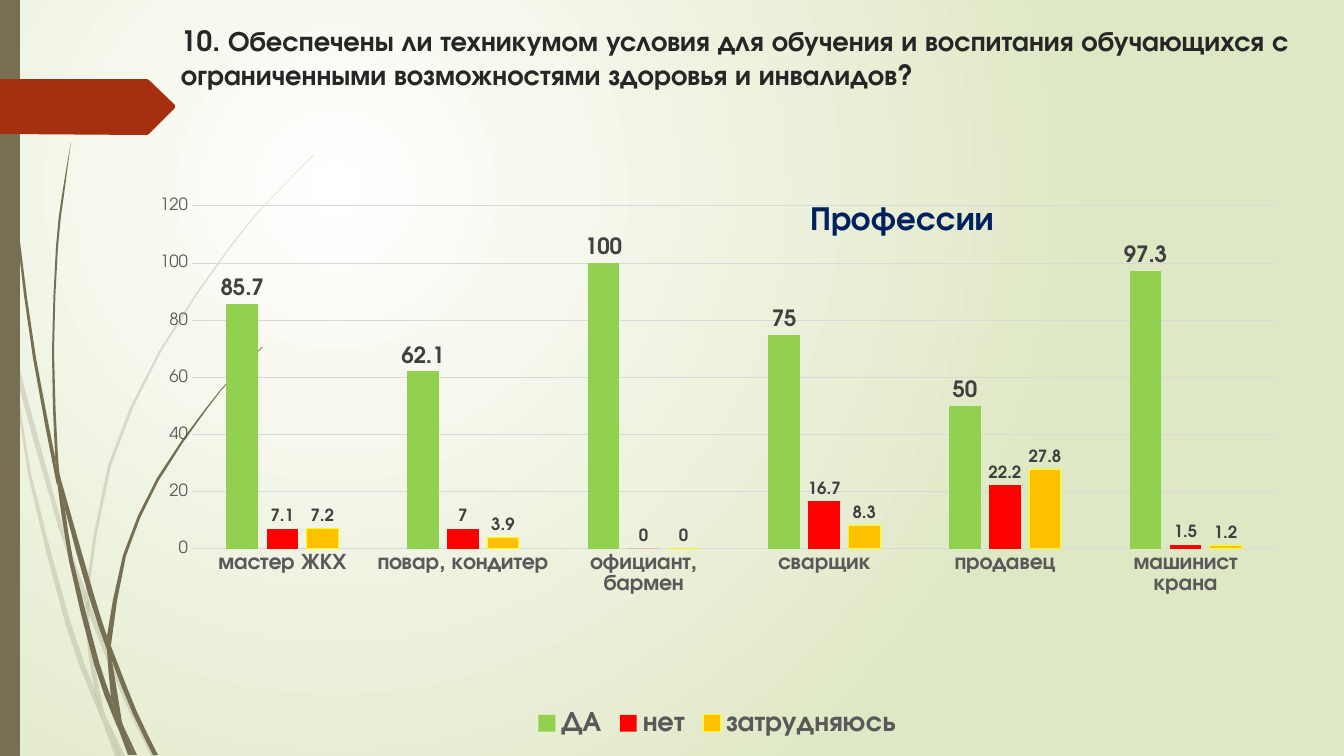
from dataclasses import dataclass

from lxml.etree import SubElement
from pptx import Presentation
from pptx.chart.data import CategoryChartData
from pptx.dml.color import RGBColor
from pptx.enum.chart import (XL_CHART_TYPE as ChartType, XL_LABEL_POSITION as LabelPos,
                             XL_LEGEND_POSITION as LegendPos, XL_TICK_MARK as TickMark)
from pptx.enum.shapes import MSO_SHAPE as Shape
from pptx.enum.text import MSO_ANCHOR as Anchor
from pptx.oxml.ns import qn
from pptx.util import Pt

PX = 914400 / 100.8
WIDTH, HEIGHT = 1344, 756


@dataclass(frozen=True)
class Theme:
    font: str = "TeX Gyre Adventor"
    olive: str = "766F54"
    rust: str = "A53010"
    glow: str = "FFFFFF"
    meadow: str = "DFE8C4"
    ink: str = "262626"
    navy: str = "002060"
    axis_text: str = "595959"
    label_text: str = "404040"
    rule: str = "D9D9D9"
    heading: int = 20
    chart_title: int = 24
    legend: int = 20
    category: int = 16
    scale: int = 12
    hairline: float = 0.75


THEME = Theme()

# Each blade piece is its left edge and its right edge, both from top to bottom.
PALE_BLADES = [
    ([(0, 301), (10, 347), (11, 353)], [(0, 284), (9, 325), (11, 353)]),
    ([(14, 348), (17, 379), (58, 526), (85, 604)], [(14, 348), (62, 524), (86, 591)]),
    ([(89, 601), (89, 615), (124, 700), (151, 756)], [(89, 601), (93, 612), (128, 698), (156, 756)]),
    ([(106, 717), (120, 756)], [(106, 717), (125, 756)]),
    ([(11, 353), (28, 474), (66, 626), (93, 699), (102, 720)],
     [(11, 353), (17, 379), (31, 473), (71, 624), (94, 688), (100, 713)]),
    ([(85, 604), (88, 651), (94, 688), (97, 698), (106, 717)],
     [(85, 604), (89, 615), (92, 651), (104, 712)]),
    ([(314, 154), (270, 199), (230, 246), (159, 351), (108, 465), (86, 589)],
     [(314, 155), (270, 200), (231, 247), (161, 352), (111, 466), (89, 589), (89, 601)]),
    ([(102, 720), (115, 756)], [(102, 720), (120, 756)]),
    ([(86, 591), (85, 604), (89, 613)], [(86, 591), (89, 601), (89, 615)]),
    ([(94, 688), (100, 713), (102, 720), (120, 756)], [(94, 688), (97, 698), (106, 717), (120, 756)]),
]
DARK_BLADES = [
    ([(3, 0), (4, 48), (7, 111), (17, 235), (33, 358), (56, 481)],
     [(4, 0), (5, 48), (8, 110), (19, 234), (36, 358), (55, 457), (57, 485)]),
    ([(60, 476), (65, 509), (89, 597), (107, 650)], [(60, 476), (94, 595), (107, 636)]),
    ([(111, 646), (112, 661), (133, 714), (153, 755)], [(111, 646), (114, 654), (137, 712), (158, 755)]),
    ([(57, 481), (69, 561), (94, 664), (112, 714), (118, 728)],
     [(57, 481), (65, 509), (73, 560), (99, 662), (111, 697), (117, 723)]),
    ([(71, 142), (62, 195), (56, 247), (52, 352), (55, 453), (60, 476)],
     [(71, 142), (64, 195), (58, 247), (54, 352), (58, 457), (60, 476)]),
    ([(123, 725), (134, 755)], [(123, 725), (137, 755)]),
    ([(55, 453), (55, 457), (57, 481)], [(55, 453), (60, 476), (65, 509)]),
    ([(262, 347), (233, 376), (206, 408), (157, 478), (123, 555), (107, 636)],
     [(263, 347), (233, 377), (207, 409), (159, 480), (126, 556), (112, 638), (111, 646)]),
    ([(118, 728), (128, 755)], [(118, 728), (132, 755)]),
    ([(107, 650), (111, 697), (117, 712), (123, 725)], [(107, 650), (110, 656), (112, 661), (122, 722)]),
    ([(107, 636), (107, 650), (112, 661)], [(107, 636), (111, 646), (112, 661)]),
    ([(111, 697), (117, 723), (118, 728), (131, 755)], [(111, 697), (117, 712), (123, 725), (134, 755)]),
]
TAG = [(0, 79), (147, 79), (149, 80), (175, 105), (175, 108), (149, 134), (147, 135), (0, 134)]

HEADING = ("10. Обеспечены ли техникумом условия для обучения и воспитания обучающихся "
           "с ограниченными возможностями здоровья и инвалидов?")
TRADES = ["мастер ЖКХ", "повар, кондитер", "официант, бармен", "сварщик", "продавец",
          "машинист крана"]
# name, values, fill, outline, label size
ANSWERS = [
    ("ДА", [85.7, 62.1, 100, 75, 50, 97.3], "92D050", None, 16),
    ("нет", [7.1, 7, 0, 16.7, 22.2, 1.5], "FF0000", None, 12),
    ("затрудняюсь", [7.2, 3.9, 0, 8.3, 27.8, 1.2], "FFC000", "FFFF00", 12),
]


def emu(*lengths):
    return [round(v * PX) for v in lengths]


def smooth_edge(points):
    """Adds the Catmull-Rom midpoint between each two neighbours."""
    ends = [points[0], *points, points[-1]]
    curve = [points[0]]
    for a, b, c, d in zip(ends, ends[1:], ends[2:], ends[3:]):
        curve += [tuple((9 * (q + r) - p - w) / 16 for p, q, r, w in zip(a, b, c, d)), c]
    return curve


def place(parent, index, **fractions):
    """Gives a chart part a manual layout in fractions of the chart."""
    for old in parent.findall(qn("c:layout")):
        parent.remove(old)
    layout = SubElement(parent, qn("c:layout"))
    parent.insert(index, layout)
    manual = SubElement(layout, qn("c:manualLayout"))
    if "w" in fractions:
        SubElement(manual, qn("c:layoutTarget"), val="inner")
    for mode in ("xMode", "yMode"):
        SubElement(manual, qn("c:" + mode), val="edge")
    for key, value in fractions.items():
        SubElement(manual, qn("c:" + key), val=str(value))


class SlideBuilder:
    def __init__(self, slide, theme):
        self.s, self.theme = slide, theme

    def style_font(self, font, size, color, bold=False):
        font.name, font.size, font.bold = self.theme.font, Pt(size), bold
        font.color.rgb = RGBColor.from_string(color)

    def style_line(self, line, color):
        line.color.rgb = RGBColor.from_string(color)
        line.width = Pt(self.theme.hairline)

    def paint(self, shape, color, alpha=None):
        shape.shadow.inherit = False
        shape.fill.solid()
        shape.fill.fore_color.rgb = RGBColor.from_string(color)
        shape.line.fill.background()
        if alpha:
            tint = shape.element.find(".//" + qn("a:srgbClr"))
            SubElement(tint, qn("a:alpha"), val=str(alpha * 1000))

    def radial_background(self, inner, outer):
        fill = self.s.background.fill
        fill.gradient()
        for stop, color, position in zip(fill.gradient_stops, (inner, outer), (0, 1)):
            stop.color.rgb = RGBColor.from_string(color)
            stop.position = position
        grad = self.s.element.find(".//" + qn("a:gradFill"))
        grad.remove(grad.find(qn("a:lin")))
        path = SubElement(grad, qn("a:path"), path="circle")
        SubElement(path, qn("a:fillToRect"), l="50000", t="50000", r="100000", b="100000")

    def outline(self, points, color, alpha=None):
        start, *rest = [emu(*p) for p in points]
        builder = self.s.shapes.build_freeform(*start, scale=1.0)
        builder.add_line_segments(rest, close=True)
        self.paint(builder.convert_to_shape(), color, alpha)

    def blade(self, left, right, color, alpha=None):
        self.outline(smooth_edge(left) + smooth_edge(right)[::-1], color, alpha)

    def bar(self, x, y, w, h, color):
        self.paint(self.s.shapes.add_shape(Shape.RECTANGLE, *emu(x, y, w, h)), color)

    def text(self, x, y, w, h, text, size, color):
        tf = self.s.shapes.add_textbox(*emu(x, y, w, h)).text_frame
        tf.word_wrap, tf.vertical_anchor = True, Anchor.TOP
        tf.text = text
        self.style_font(tf.paragraphs[0].runs[0].font, size, color, True)

    def column_chart(self, x, y, w, h, title, categories, series):
        th = self.theme
        data = CategoryChartData()
        data.categories = categories
        for name, values, *_ in series:
            data.add_series(name, values)
        chart = self.s.shapes.add_chart(
            ChartType.COLUMN_CLUSTERED, *emu(x, y, w, h), data).chart
        self.style_font(chart.font, 10, "000000")

        chart.has_title = True
        tf = chart.chart_title.text_frame
        tf.text = title
        self.style_font(tf.paragraphs[0].runs[0].font, th.chart_title, th.navy, True)
        heading = chart.element.find(".//" + qn("c:title"))
        place(heading, 1, x=657 / w, y=8 / h)
        heading.find(qn("c:overlay")).set("val", "1")
        place(chart.element.find(".//" + qn("c:plotArea")), 0,
              x=45 / w, y=19 / h, w=1084 / w, h=343 / h)

        chart.has_legend = True
        chart.legend.position = LegendPos.BOTTOM
        chart.legend.include_in_layout = False
        self.style_font(chart.legend.font, th.legend, th.axis_text, True)

        cat, val = chart.category_axis, chart.value_axis
        for axis, size, bold in ((cat, th.category, True), (val, th.scale, False)):
            axis.major_tick_mark = axis.minor_tick_mark = TickMark.NONE
            self.style_font(axis.tick_labels.font, size, th.axis_text, bold)
        self.style_line(cat.format.line, th.rule)
        val.format.line.fill.background()
        self.style_line(val.major_gridlines.format.line, th.rule)
        val.minimum_scale, val.maximum_scale, val.major_unit = 0, 120, 20

        plot = chart.plots[0]
        plot.gap_width, plot.overlap, plot.vary_by_categories = 219, -27, False
        for ser, (_, _, color, edge, size) in zip(plot.series, series):
            ser.invert_if_negative = False
            ser.format.fill.solid()
            ser.format.fill.fore_color.rgb = RGBColor.from_string(color)
            if edge:
                self.style_line(ser.format.line, edge)
            else:
                ser.format.line.fill.background()
            labels = ser.data_labels
            labels.show_value, labels.position = True, LabelPos.OUTSIDE_END
            self.style_font(labels.font, size, th.label_text, True)


def main():
    prs = Presentation()
    prs.slide_width, prs.slide_height = emu(WIDTH, HEIGHT)
    b = SlideBuilder(prs.slides.add_slide(prs.slide_layouts[6]), THEME)
    b.radial_background(THEME.glow, THEME.meadow)
    for blades, alpha in ((PALE_BLADES, 20), (DARK_BLADES, None)):
        for left, right in blades:
            b.blade(left, right, THEME.olive, alpha)
    b.bar(0, 0, 20, HEIGHT, THEME.olive)
    b.outline(TAG, THEME.rust)
    b.text(171, 19, 1162, 141, HEADING, THEME.heading, THEME.ink)
    b.column_chart(147, 187, 1141, 555, "Профессии", TRADES, ANSWERS)
    prs.save("out.pptx")


if __name__ == "__main__":
    main()
